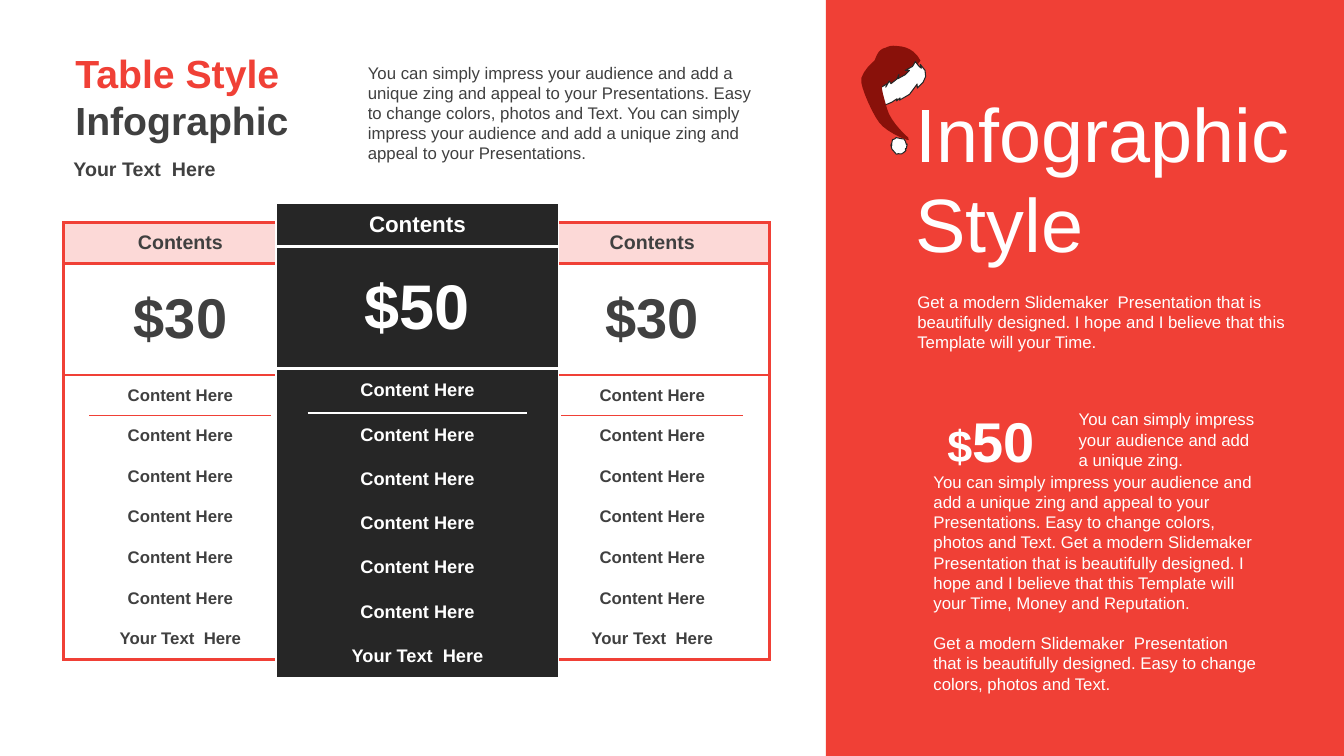
from lxml.etree import SubElement
from pptx import Presentation
from pptx.dml.color import RGBColor
from pptx.enum.shapes import MSO_SHAPE
from pptx.enum.text import MSO_ANCHOR, MSO_AUTO_SIZE, PP_ALIGN
from pptx.oxml.ns import qn
from pptx.util import Inches, Pt

RED = RGBColor(0xF0, 0x40, 0x36)
PINK = RGBColor(0xFC, 0xD9, 0xD7)
WHITE = RGBColor(0xFF, 0xFF, 0xFF)
BLACK = RGBColor(0x26, 0x26, 0x26)
GRAY = RGBColor(0x40, 0x40, 0x40)
DARK_RED = RGBColor(0x89, 0x11, 0x0A)

NO_GRID_STYLE = "{2D5ABB26-0587-4C30-8999-92F81FD0307C}"
HAT_ANGLE = 345.1
PLAN_ITEMS = ["Content Here"] * 6 + ["Your Text  Here"]

SIDE_PLAN = dict(price="$30", head_fill=PINK, fill=WHITE, line=RED, color=GRAY,
                 edge=2.25, sizes=(14, 40, 12), inset=0.08)
MAIN_PLAN = dict(price="$50", head_fill=BLACK, fill=BLACK, line=WHITE, color=WHITE,
                 edge=1.5, sizes=(16, 45, 13), inset=0.09)

IMPRESS = "You can simply impress your audience and add a unique zing"
APPEAL = IMPRESS + " and appeal to your Presentations."
MODERN = "Get a modern Slidemaker  Presentation that is beautifully designed."
HOPE = " I hope and I believe that this Template will your Time"

CROWN_START = (8.64, 0.82)
CROWN_CURVES = [
    ((8.63, 0.81), (8.62, 0.81), (8.6, 0.8)), ((8.59, 0.72), (8.63, 0.64), (8.67, 0.58)),
    ((8.71, 0.53), (8.74, 0.47), (8.8, 0.46)), ((8.86, 0.46), (8.86, 0.44), (8.94, 0.47)),
    ((9.03, 0.5), (9.1, 0.55), (9.13, 0.67)), ((9.08, 0.71), (9.03, 0.76), (8.97, 0.81)),
    ((8.91, 0.81), (8.83, 0.81), (8.78, 0.82))]
TAIL_START = (8.87, 1.42)
TAIL_CURVES = [
    ((8.86, 1.42), (8.7, 1.29), (8.67, 1.2)), ((8.63, 1.11), (8.59, 0.86), (8.6, 0.77)),
    ((8.6, 0.68), (8.8, 0.57), (8.84, 0.58)), ((8.89, 0.59), (8.83, 0.76), (8.8, 0.82)),
    ((8.77, 0.87), (8.78, 0.99), (8.78, 1.09)), ((8.78, 1.19), (8.85, 1.33), (8.91, 1.42)),
    ((8.9, 1.43), (8.93, 1.47), (8.87, 1.42))]
POMPOM = [
    (8.84, 1.46), (8.84, 1.43), (8.85, 1.42), (8.84, 1.42), (8.85, 1.41), (8.86, 1.39),
    (8.87, 1.37), (8.89, 1.37), (8.91, 1.36), (8.93, 1.37), (8.95, 1.38), (8.97, 1.39),
    (8.98, 1.39), (8.99, 1.42), (8.99, 1.45), (9, 1.45), (8.98, 1.49), (8.97, 1.49),
    (8.97, 1.51), (8.95, 1.52), (8.92, 1.53), (8.89, 1.52), (8.87, 1.52), (8.86, 1.5)]
BRIM = [
    (9.17, 0.7), (9.17, 0.74), (9.15, 0.71), (9.13, 0.66), (9.09, 0.7), (9.01, 0.72),
    (9.05, 0.73), (9, 0.76), (8.92, 0.78), (8.94, 0.74), (8.91, 0.78), (8.84, 0.81),
    (8.83, 0.78), (8.78, 0.83), (8.81, 0.8), (8.7, 0.83), (8.63, 0.8), (8.64, 0.88),
    (8.63, 0.88), (8.69, 0.98), (8.67, 0.96), (8.69, 0.99), (8.73, 1), (8.8, 0.99),
    (8.86, 0.97), (8.85, 0.99), (8.89, 0.97), (8.88, 0.99), (8.99, 0.96), (9.09, 0.88),
    (9.08, 0.92), (9.15, 0.88), (9.19, 0.83), (9.2, 0.77)]


def set_font(r, size, color, bold=False):
    for name, value in dict(name="Arial", size=Pt(size), bold=bold).items():
        setattr(r.font, name, value)
    r.font.color.rgb = color


def fill_text(tf, paragraphs, align=PP_ALIGN.LEFT, anchor=MSO_ANCHOR.TOP, gap=0):
    formats = dict(word_wrap=True, auto_size=MSO_AUTO_SIZE.NONE, vertical_anchor=anchor)
    for name, value in formats.items():
        setattr(tf, name, value)
    for i, runs in enumerate(paragraphs):
        p = tf.add_paragraph() if i else tf.paragraphs[0]
        p.alignment = align
        p.space_before = Pt(gap if i else 0)
        for text, *font in runs:
            r = p.add_run()
            r.text = text
            set_font(r, *font)


def add_text(s, box, paragraphs, **formats):
    sp = s.shapes.add_textbox(*map(Inches, box))
    fill_text(sp.text_frame, paragraphs, **formats)


def flatten(start, curves, steps=6):
    points = [start]
    for c1, c2, end in curves:
        a = points[-1]
        for i in range(1, steps + 1):
            t = i / steps
            u = 1 - t
            points.append(tuple(
                u ** 3 * a[k] + 3 * u * u * t * c1[k] + 3 * u * t * t * c2[k] + t ** 3 * end[k]
                for k in (0, 1)))
    return points


def add_hat(s, left, top):
    parts = [(flatten(CROWN_START, CROWN_CURVES), DARK_RED), (POMPOM, WHITE),
             (BRIM, WHITE), (flatten(TAIL_START, TAIL_CURVES), DARK_RED)]
    for points, fill in parts:
        placed = [(Inches(left + x - 8.57), Inches(top + y - 0.45)) for x, y in points]
        builder = s.shapes.build_freeform(*placed[0])
        builder.add_line_segments(placed[1:], close=True)
        sp = builder.convert_to_shape()
        sp.rotation = HAT_ANGLE
        sp.shadow.inherit = False
        sp.fill.solid()
        sp.fill.fore_color.rgb = fill
        if fill == WHITE:
            sp.line.color.rgb = BLACK
            sp.line.width = Pt(0.75)
        else:
            sp.line.fill.background()


def set_borders(cell, widths, color):
    tcPr = cell._tc.get_or_add_tcPr()
    for side in "LRTB":
        if side in widths:
            ln = SubElement(tcPr, qn("a:ln" + side), w=str(Pt(widths[side])))
            SubElement(SubElement(ln, qn("a:solidFill")), qn("a:srgbClr"), val=str(color))


def add_plan(s, left, top, width, height, plan):
    gf = s.shapes.add_table(9, 3, *map(Inches, (left, top, width, height)))
    table = gf.table
    table.first_row = table.horz_banding = False
    for style in gf.element.iter(qn("a:tableStyleId")):
        style.text = NO_GRID_STYLE
    for col, share in zip(table.columns, (1, 7, 1)):
        col.width = Inches(width * share / 9)
    for i, row in enumerate(table.rows):
        row.height = Inches(height / 10.75 * (2.75 if i == 1 else 1))

    head_size, price_size, item_size = plan["sizes"]
    texts = [("Contents", head_size), (plan["price"], price_size)]
    texts += [(item, item_size) for item in PLAN_ITEMS]
    edge, inset = plan["edge"], plan["inset"]
    for i, (text, size) in enumerate(texts):
        merged = i in (0, 1, 8)
        if merged:
            table.cell(i, 0).merge(table.cell(i, 2))
        for j in range(3):
            cell = table.cell(i, j)
            widths = {}
            if j == 0:
                widths["L"] = edge
            if j == 2 or merged:
                widths["R"] = edge
            if i < 2:
                widths["T"] = 2.25 if i else edge
            if i == 0:
                widths["B"] = 2.25
            if i == 8:
                widths["B"] = edge
            if i == 2 and j == 1:
                widths["T"] = 1.5
            set_borders(cell, widths, plan["line"])
            cell.fill.solid()
            cell.fill.fore_color.rgb = plan["fill"] if i else plan["head_fill"]
            formats = dict(margin_left=Inches(inset), margin_right=Inches(inset),
                           margin_top=Inches(inset / 2), margin_bottom=Inches(inset / 2),
                           vertical_anchor=MSO_ANCHOR.MIDDLE)
            for name, value in formats.items():
                setattr(cell, name, value)
            if j == (0 if merged else 1):
                p = cell.text_frame.paragraphs[0]
                p.alignment = PP_ALIGN.CENTER
                r = p.add_run()
                r.text = text
                set_font(r, size, plan["color"], True)


def add_pricing(s, left, top):
    add_plan(s, left, top + 0.2, 2.32, 4.33, SIDE_PLAN)
    add_plan(s, left + 4.68, top + 0.2, 2.32, 4.33, SIDE_PLAN)
    add_plan(s, left + 2.11, top, 2.8, 4.72, MAIN_PLAN)


def add_heading(s, left, top):
    add_text(s, (left + 0.02, top, 2.96, 1.04),
             [[("Table Style", 28, RED, True)], [("Infographic", 28, GRAY, True)]])
    add_text(s, (left, top + 1.07, 2.96, 0.34), [[("Your Text  Here", 14, GRAY, True)]])
    add_text(s, (left + 2.92, top + 0.13, 4.08, 1.11),
             [[(APPEAL + " Easy to change colors, photos and Text. " + APPEAL.replace("  ", " "),
                12, GRAY)]])


def add_panel(s, left, top, width, height):
    panel = s.shapes.add_shape(MSO_SHAPE.RECTANGLE, *map(Inches, (left, top, width, height)))
    panel.shadow.inherit = False
    panel.fill.solid()
    panel.fill.fore_color.rgb = RED
    panel.line.fill.background()

    title = s.shapes.title
    panel.element.addnext(title.element)
    box = (left + 0.79, top + 0.8, 4.1, 1.92)
    for name, value in zip(("left", "top", "width", "height"), box):
        setattr(title, name, Inches(value))
    fill_text(title.text_frame, [[("Infographic", 54, WHITE)], [("Style", 54, WHITE)]],
              anchor=MSO_ANCHOR.MIDDLE)

    add_text(s, (left + 0.81, top + 2.84, 4.08, 0.71), [[(MODERN + HOPE + ".", 12, WHITE)]])
    add_hat(s, left + 0.38, top + 0.45)
    add_text(s, (left + 0.74, top + 3.98, 1.8, 0.77),
             [[("$", 32, WHITE, True), ("50", 40, WHITE, True)]],
             align=PP_ALIGN.CENTER, anchor=MSO_ANCHOR.MIDDLE)
    add_text(s, (left + 2.41, top + 4.01, 2, 0.71), [[(IMPRESS + ".", 12, WHITE)]])
    add_text(s, (left + 0.97, top + 4.63, 3.43, 2.32),
             [[(APPEAL + " Easy to change colors, photos and Text. " + MODERN + HOPE
                + ", Money and Reputation.", 12, WHITE)],
              [(MODERN + " Easy to change colors, photos and Text.", 12, WHITE)]], gap=14.4)


def main():
    prs = Presentation()
    prs.slide_width, prs.slide_height = Inches(13.33), Inches(7.5)
    s = prs.slides.add_slide(prs.slide_layouts[5])
    add_panel(s, 8.19, 0, 5.15, 7.5)
    add_pricing(s, 0.63, 2.01)
    add_heading(s, 0.63, 0.44)
    prs.save("out.pptx")


if __name__ == "__main__":
    main()
